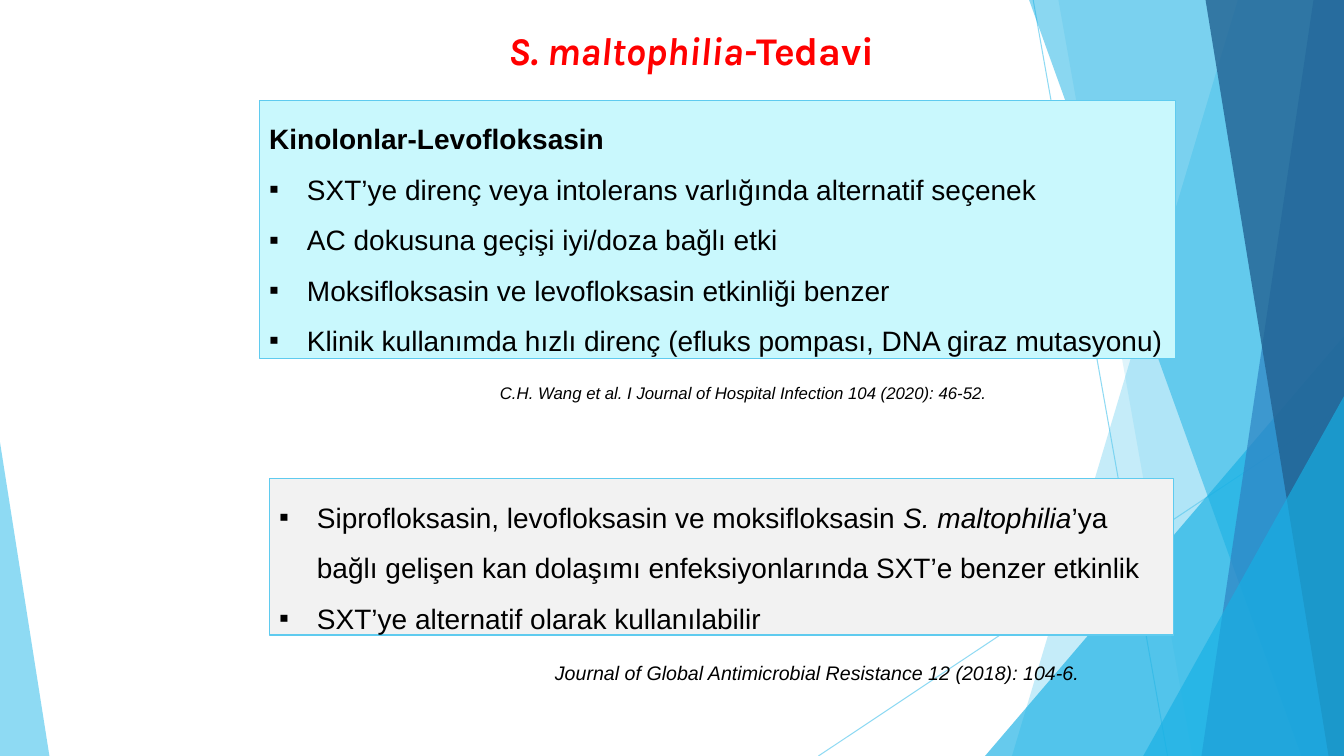
from lxml import etree
from pptx import Presentation
from pptx.dml.color import RGBColor
from pptx.enum.shapes import MSO_CONNECTOR, MSO_SHAPE
from pptx.enum.text import MSO_ANCHOR, MSO_AUTO_SIZE, PP_ALIGN
from pptx.oxml.ns import qn
from pptx.util import Pt

STRAIGHT = MSO_CONNECTOR.STRAIGHT
RECTANGLE = MSO_SHAPE.RECTANGLE
TRIANGLE = MSO_SHAPE.ISOSCELES_TRIANGLE
TOP = MSO_ANCHOR.TOP
FIT_SHAPE = MSO_AUTO_SIZE.SHAPE_TO_FIT_TEXT
LEFT, CENTER = PP_ALIGN.LEFT, PP_ALIGN.CENTER

WIDTH, HEIGHT = 960, 540
COLORS = {
    "sky": "5FCBEF",
    "azure": "17B0E4",
    "blue": "2E83C3",
    "navy": "226292",
    "aqua": "C9F8FD",
    "gray": "F2F2F2",
    "black": "000000",
    "red": "FF0000",
}


def rgb(name):
    return RGBColor.from_string(COLORS[name])


def add_run(paragraph, text, size=20, font="Arial", color="black", bold=False, italic=False):
    run = paragraph.add_run()
    run.text = text
    run.font.size = Pt(size)
    run.font.name = font
    run.font.color.rgb = rgb(color)
    run.font.bold = bold
    run.font.italic = italic


def set_opacity(parent, percent):
    for color in parent.iter(qn("a:srgbClr")):
        etree.SubElement(color, qn("a:alpha"), val=str(percent * 1000))


class SlideBuilder:
    def __init__(self, slide, bullet_indent=27, line_spacing=1.5, border=0.75):
        self.slide = slide
        self.shapes = slide.shapes
        self.bullet_indent = bullet_indent
        self.line_spacing = line_spacing
        self.border = border

    def fill(self, shape, color, opacity):
        shape.shadow.inherit = False
        shape.fill.solid()
        shape.fill.fore_color.rgb = rgb(color)
        shape.line.fill.background()
        set_opacity(shape.fill._xPr, opacity)

    def ray(self, x1, y1, x2, y2):
        ray = self.shapes.add_connector(STRAIGHT, Pt(x1), Pt(y1), Pt(x2), Pt(y2))
        ray.line.color.rgb = rgb("sky")
        ray.line.width = Pt(self.border)
        properties = ray._element.spPr
        set_opacity(properties, 70)
        etree.SubElement(properties, qn("a:effectLst"))

    def band(self, top_x, bottom_x, color, opacity):
        """Facet from a slanted left edge to the right edge of the slide."""
        outline = self.shapes.build_freeform(Pt(top_x), 0, scale=1.0)
        corners = [(WIDTH, 0), (WIDTH, HEIGHT), (bottom_x, HEIGHT)]
        outline.add_line_segments([(Pt(x), Pt(y)) for x, y in corners], close=True)
        self.fill(outline.convert_to_shape(), color, opacity)

    def wedge(self, left, top, width, apex, color, opacity):
        """Triangle that stands on the bottom edge of the slide."""
        wedge = self.shapes.add_shape(TRIANGLE, Pt(left), Pt(top), Pt(width), Pt(HEIGHT - top))
        wedge.adjustments[0] = apex
        self.fill(wedge, color, opacity)

    def frame(self, shape):
        frame = shape.text_frame
        frame.word_wrap = True
        frame.auto_size = FIT_SHAPE
        frame.vertical_anchor = TOP
        return frame

    def title(self, left, top, width, height, runs):
        title = self.shapes.title
        title.left, title.top = Pt(left), Pt(top)
        title.width, title.height = Pt(width), Pt(height)
        paragraph = self.frame(title).paragraphs[0]
        paragraph.alignment = CENTER
        for text, italic in runs:
            add_run(paragraph, text, size=28, font="Karla", color="red", bold=True, italic=italic)

    def panel(self, left, top, width, height, color, points, heading=None):
        panel = self.shapes.add_shape(RECTANGLE, Pt(left), Pt(top), Pt(width), Pt(height))
        self.fill(panel, color, 100)
        panel.line.color.rgb = rgb("sky")
        panel.line.width = Pt(self.border)
        frame = self.frame(panel)
        lines = ([heading] if heading else []) + points
        for index, line in enumerate(lines):
            paragraph = frame.paragraphs[0] if index == 0 else frame.add_paragraph()
            paragraph.alignment = LEFT
            paragraph.line_spacing = self.line_spacing
            if line is heading:
                add_run(paragraph, line, bold=True)
                continue
            self.bullet(paragraph)
            for text, italic in line:
                add_run(paragraph, text, italic=italic)

    def bullet(self, paragraph):
        properties = paragraph._p.get_or_add_pPr()
        properties.set("marL", str(Pt(self.bullet_indent)))
        properties.set("indent", str(-Pt(self.bullet_indent)))
        etree.SubElement(properties, qn("a:buFont"), typeface="Arial")
        etree.SubElement(properties, qn("a:buChar"), char="▪")

    def citation(self, left, top, width, height, text, size):
        citation = self.shapes.add_textbox(Pt(left), Pt(top), Pt(width), Pt(height))
        add_run(self.frame(citation).paragraphs[0], text, size=size, italic=True)


def main():
    presentation = Presentation()
    presentation.slide_width, presentation.slide_height = Pt(WIDTH), Pt(HEIGHT)
    builder = SlideBuilder(presentation.slides.add_slide(presentation.slide_layouts[5]))

    # Faceted background
    builder.ray(738, 0, 834, HEIGHT)
    builder.ray(WIDTH, 290, 584.6, HEIGHT)
    builder.band(884.2, 722.9, "sky", 36)
    builder.band(756, 851.8, "sky", 20)
    builder.wedge(703.6, 240, 256.4, 1, "azure", 66)
    builder.band(735.1, 929.5, "azure", 50)
    builder.band(938.2, 858.2, "blue", 70)
    builder.band(861.1, 949, "navy", 80)
    builder.wedge(816.6, 283, 143.4, 1, "azure", 66)
    builder.wedge(0, 316, 35.3, 0, "sky", 70)

    # Title
    builder.title(224.6, 15.1, 538.6, 41, [("S. maltophilia-", True), ("Tedavi", False)])

    # Quinolones and their source
    quinolone_points = [
        "SXT’ye direnç veya intolerans varlığında alternatif seçenek",
        "AC dokusuna geçişi iyi/doza bağlı etki",
        "Moksifloksasin ve levofloksasin etkinliği benzer",
        "Klinik kullanımda hızlı direnç (efluks pompası, DNA giraz mutasyonu)",
    ]
    builder.panel(185.2, 71.5, 654.4, 184.3, "aqua",
                  [[(point, False)] for point in quinolone_points],
                  heading="Kinolonlar-Levofloksasin")
    builder.citation(350, 270, 489, 21.8,
                     "C.H. Wang et al. I Journal of Hospital Infection 104 (2020): 46-52.", 12)

    # Bloodstream infections and their source
    bloodstream_points = [
        [("Siprofloksasin, levofloksasin ve moksifloksasin ", False),
         ("S. maltophilia", True),
         ("’ya bağlı gelişen kan dolaşımı enfeksiyonlarında SXT’e benzer etkinlik", False)],
        [("SXT’ye alternatif olarak kullanılabilir", False)],
    ]
    builder.panel(192.3, 342, 646.3, 111.6, "gray", bloodstream_points)
    builder.citation(389.3, 468.7, 449.3, 24.2,
                     "Journal of Global Antimicrobial Resistance 12 (2018): 104-6.", 14)

    presentation.save("out.pptx")


if __name__ == "__main__":
    main()
